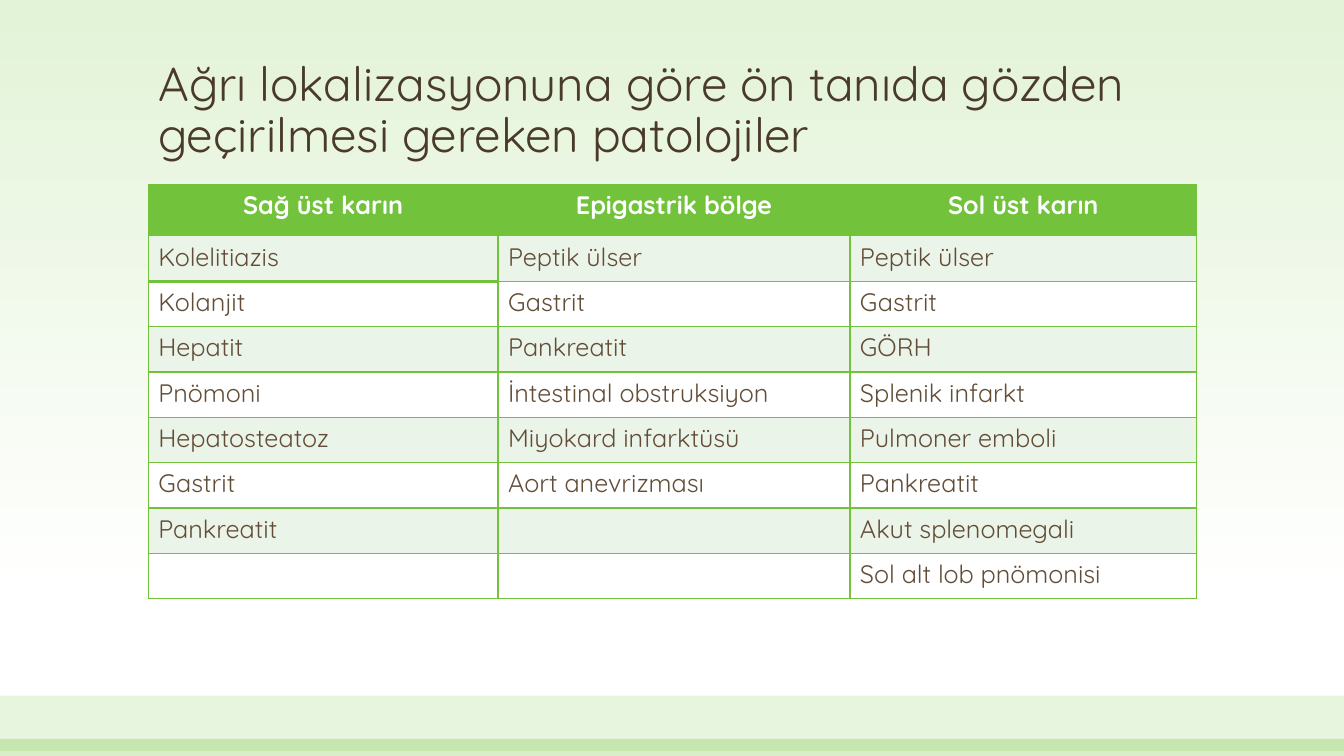
from dataclasses import dataclass

from lxml.etree import SubElement
from pptx import Presentation
from pptx.dml.color import RGBColor
from pptx.enum.shapes import MSO_SHAPE
from pptx.enum.text import MSO_ANCHOR, MSO_AUTO_SIZE, PP_ALIGN
from pptx.oxml import parse_xml
from pptx.oxml.ns import nsdecls, qn
from pptx.util import Inches, Pt

FONT = "Quicksand"
COLORS = {
    "green": "72C23C",
    "mist": "E3F3D8",
    "band": "EBF4E8",
    "white": "FFFFFF",
    "title": "4A3A2A",
    "body": "624D38",
}
TITLE = "Ağrı lokalizasyonuna göre ön tanıda gözden geçirilmesi gereken patolojiler"
THIN, THICK = 1, 2.25


@dataclass
class FooterBand:
    top: float
    height: float
    opacity: int


@dataclass
class Region:
    name: str
    width: float
    diagnoses: list[str]


FOOTER_BANDS = [FooterBand(6.9, 0.55, 17), FooterBand(7.33, 0.17, 28)]
REGIONS = [
    Region("Sağ üst karın", 3.47, [
        "Kolelitiazis", "Kolanjit", "Hepatit", "Pnömoni",
        "Hepatosteatoz", "Gastrit", "Pankreatit",
    ]),
    Region("Epigastrik bölge", 3.49, [
        "Peptik ülser", "Gastrit", "Pankreatit", "İntestinal obstruksiyon",
        "Miyokard infarktüsü", "Aort anevrizması",
    ]),
    Region("Sol üst karın", 3.44, [
        "Peptik ülser", "Gastrit", "GÖRH", "Splenik infarkt",
        "Pulmoner emboli", "Pankreatit", "Akut splenomegali",
        "Sol alt lob pnömonisi",
    ]),
]


def rgb(name: str) -> RGBColor:
    return RGBColor.from_string(COLORS[name])


def style_text(p, size: float, color: str, bold: bool = False) -> None:
    for font in [p.font, *(r.font for r in p.runs)]:
        font.name = FONT
        font.size = Pt(size)
        font.bold = bold
        font.color.rgb = rgb(color)


def set_background(s) -> None:
    fill = s.background.fill
    fill.gradient()
    fill.gradient_angle = 270
    for stop, (position, color) in zip(fill.gradient_stops, [(0, "mist"), (0.79, "white")]):
        stop.position = position
        stop.color.rgb = rgb(color)


def add_footer_band(s, band: FooterBand, width: int) -> None:
    sp = s.shapes.add_shape(
        MSO_SHAPE.RECTANGLE, 0, Inches(band.top), width, Inches(band.height)
    )
    sp.shadow.inherit = False
    sp.line.fill.background()
    sp.fill.solid()
    sp.fill.fore_color.rgb = rgb("green")
    color = sp.fill._xPr.find(qn("a:solidFill"))[0]
    SubElement(color, qn("a:alpha"), val=str(band.opacity * 1000))


def set_title(s) -> None:
    sp = s.shapes.title
    sp.left, sp.top = Inches(1.47), Inches(0.48)
    sp.width, sp.height = Inches(10.4), Inches(1.19)
    tf = sp.text_frame
    tf.text = TITLE
    tf.word_wrap = True
    tf.auto_size = MSO_AUTO_SIZE.NONE
    tf.vertical_anchor = MSO_ANCHOR.BOTTOM
    p = tf.paragraphs[0]
    p.alignment = PP_ALIGN.LEFT
    p.line_spacing = 0.9
    style_text(p, 34, "title")


def set_borders(cell, widths: dict[str, float]) -> None:
    props = cell._tc.get_or_add_tcPr()
    for i, (side, width) in enumerate(widths.items()):
        props.insert(i, parse_xml(
            f'<a:ln{side} {nsdecls("a")} w="{Pt(width)}"><a:solidFill>'
            f'<a:srgbClr val="{COLORS["green"]}"/></a:solidFill></a:ln{side}>'
        ))


def fill_cell(cell, text: str, row: int, col: int) -> None:
    header = row == 0
    cell.text_frame.text = text
    p = cell.text_frame.paragraphs[0]
    p.alignment = PP_ALIGN.CENTER if header else PP_ALIGN.LEFT
    style_text(p, 18, "white" if header else "body", header)
    cell.fill.solid()
    cell.fill.fore_color.rgb = rgb("green" if header else "band" if row % 2 else "white")
    set_borders(cell, {
        "L": THICK if col > 0 else THIN,
        "R": THICK if col < len(REGIONS) - 1 else THIN,
        "T": THICK if (row, col) == (2, 0) else THIN,
        "B": THICK if (row, col) == (1, 0) else THIN,
    })


def add_region_table(s) -> None:
    rows = 1 + max(len(region.diagnoses) for region in REGIONS)
    table = s.shapes.add_table(
        rows, len(REGIONS), Inches(1.47), Inches(1.83), Inches(10.4), Inches(4.1)
    ).table
    table.horz_banding = False
    for row in range(rows):
        table.rows[row].height = Inches(0.45 if row else 0.51)
    for col, region in enumerate(REGIONS):
        table.columns[col].width = Inches(region.width)
        texts = [region.name, *region.diagnoses]
        for row in range(rows):
            text = texts[row] if row < len(texts) else ""
            fill_cell(table.cell(row, col), text, row, col)


def main() -> None:
    prs = Presentation()
    prs.slide_width, prs.slide_height = Inches(13.33), Inches(7.5)
    s = prs.slides.add_slide(prs.slide_layouts[5])
    set_background(s)
    for band in FOOTER_BANDS:
        add_footer_band(s, band, prs.slide_width)
    set_title(s)
    add_region_table(s)
    prs.save("out.pptx")


if __name__ == "__main__":
    main()
